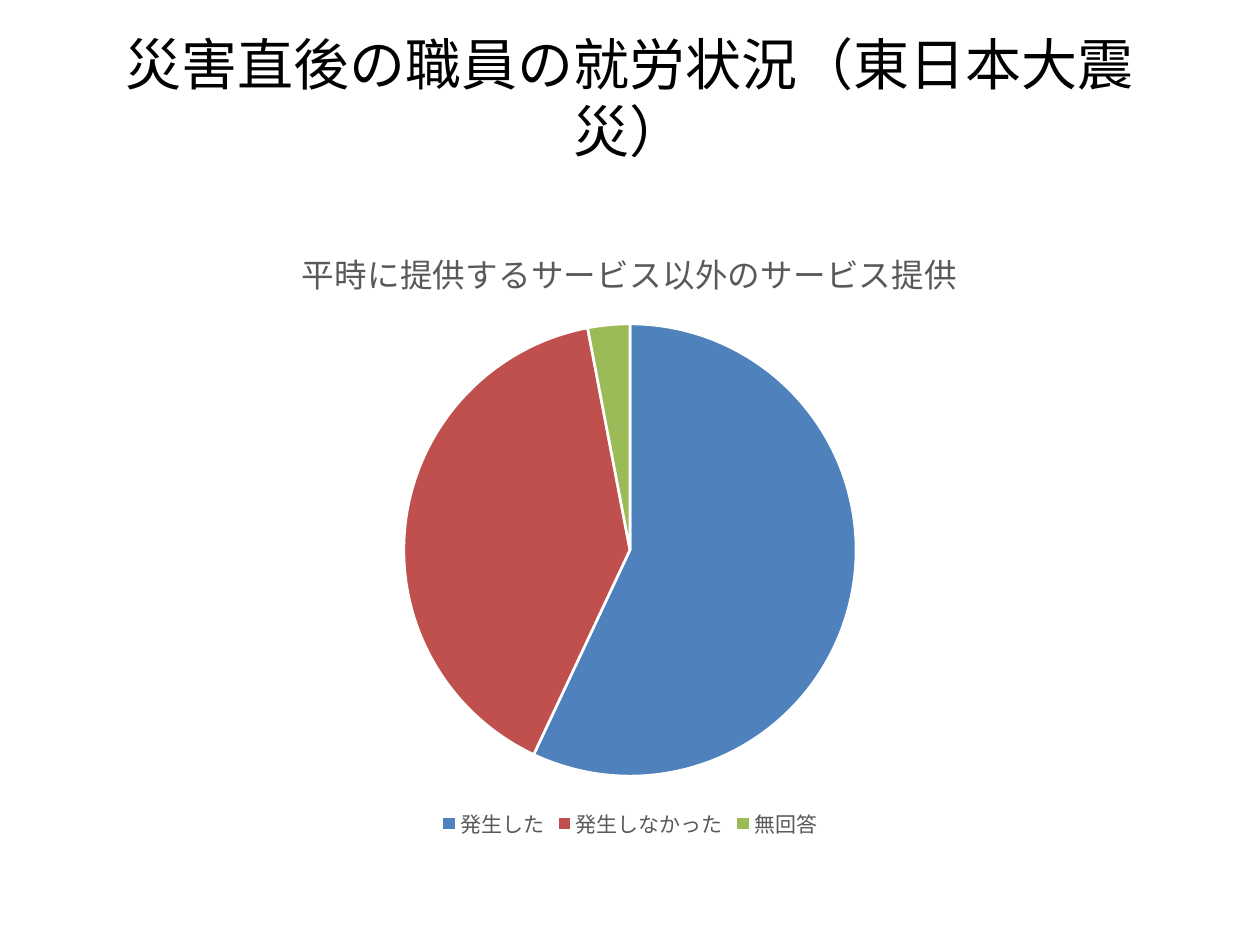
from pptx import Presentation
from pptx.chart.data import CategoryChartData
from pptx.dml.color import RGBColor
from pptx.enum.chart import XL_CHART_TYPE, XL_LEGEND_POSITION
from pptx.enum.text import MSO_ANCHOR, PP_ALIGN
from pptx.util import Inches, Pt

PIE = XL_CHART_TYPE.PIE
BOTTOM = XL_LEGEND_POSITION.BOTTOM
MIDDLE = MSO_ANCHOR.MIDDLE
CENTER = PP_ALIGN.CENTER

TITLE = "災害直後の職員の就労状況（東日本大震災）"
CHART_TITLE = "平時に提供するサービス以外のサービス提供"
ANSWERS = [("発生した", 57, "blue"), ("発生しなかった", 40, "red"), ("無回答", 3, "green")]
COLORS = {
    "blue": "4F81BD", "red": "C0504D", "green": "9BBB59",
    "black": "000000", "gray": "595959", "white": "FFFFFF",
}
FONT = "Calibri"
MARGIN, WIDTH = Inches(0.5), Inches(9)


def rgb(name):
    return RGBColor.from_string(COLORS[name])


def style(font, size, color):
    font.name, font.size, font.bold = FONT, Pt(size), False
    font.color.rgb = rgb(color)


def add_title(s):
    title = s.shapes.title
    title.left, title.top, title.width, title.height = MARGIN, Inches(0.3), WIDTH, Inches(0.93)
    tf = title.text_frame
    tf.text = TITLE
    tf.word_wrap = True
    tf.vertical_anchor = MIDDLE
    p = tf.paragraphs[0]
    p.alignment = CENTER
    style(p.font, 32, "black")


def add_pie(s):
    data = CategoryChartData()
    data.categories = [label for label, _, _ in ANSWERS]
    data.add_series(CHART_TITLE, [value for _, value, _ in ANSWERS])
    chart = s.shapes.add_chart(PIE, MARGIN, Inches(1.75), WIDTH, Inches(4.95), data).chart
    style(chart.font, 10, "black")

    chart.has_title = True
    tf = chart.chart_title.text_frame
    tf.text = CHART_TITLE
    style(tf.paragraphs[0].font, 18.6, "gray")
    chart.chart_title.include_in_layout = False

    chart.has_legend = True
    chart.legend.position = BOTTOM
    chart.legend.include_in_layout = False
    style(chart.legend.font, 12, "gray")

    plot = chart.plots[0]
    plot.vary_by_categories = True
    for i, (_, _, color) in enumerate(ANSWERS):
        fmt = plot.series[0].points[i].format
        fmt.fill.solid()
        fmt.fill.fore_color.rgb = rgb(color)
        fmt.line.color.rgb = rgb("white")
        fmt.line.width = Pt(1.5)


prs = Presentation()
prs.slide_width, prs.slide_height = Inches(10), Inches(7.5)
s = prs.slides.add_slide(prs.slide_layouts[5])
add_title(s)
add_pie(s)
prs.save("out.pptx")
